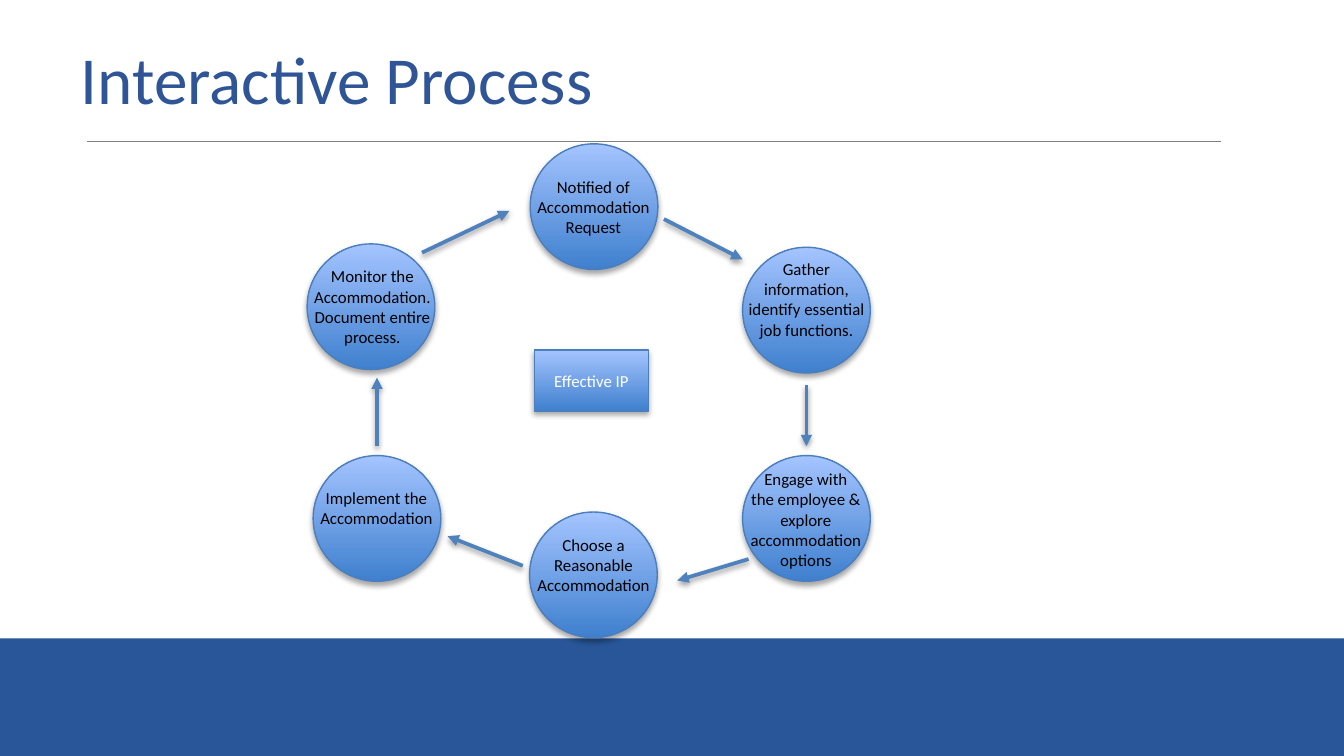
from dataclasses import dataclass

from lxml.etree import SubElement
from pptx import Presentation
from pptx.dml.color import RGBColor
from pptx.enum.shapes import MSO_CONNECTOR, MSO_SHAPE
from pptx.enum.text import MSO_ANCHOR, MSO_AUTO_SIZE, PP_ALIGN
from pptx.oxml.ns import qn
from pptx.util import Emu, Pt

EMU_PER_PX = 4572  # 200 px to the inch
SLIDE_WIDTH, SLIDE_HEIGHT = 2000, 1125
BAND_TOP = 950
CIRCLE_WIDTH, CIRCLE_HEIGHT = 190, 187


@dataclass(frozen=True)
class Theme:
    font: str = "Calibri"
    title_size: float = 36
    label_size: float = 9
    title: str = "2F5596"
    label: str = "000000"
    hub_label: str = "FFFFFF"
    band: str = "285699"
    rule: str = "7F7F7F"
    gradient_bottom: str = "3F80CE"
    gradient_top: str = "A4C4FF"
    outline: str = "4B7EBC"
    arrow: str = "4F81BD"
    thin_line: float = 0.75
    arrow_line: float = 2


@dataclass(frozen=True)
class Box:
    left: int
    top: int
    width: int
    height: int

    def emu(self) -> tuple:
        return tuple(px(n) for n in (self.left, self.top, self.width, self.height))


@dataclass(frozen=True)
class Step:
    text: str
    left: int
    top: int
    label: Box


@dataclass(frozen=True)
class Arrow:
    start: tuple[int, int]
    end: tuple[int, int]


THEME = Theme()

STEPS = (
    Step("Notified of Accommodation Request", 789, 214, Box(777, 253, 212, 112)),
    Step("Gather information, identify essential job functions.",
         1105, 368, Box(1094, 375, 212, 172)),
    Step("Engage with\vthe employee & explore accommodation options",
         1105, 678, Box(1088, 688, 222, 172)),
    Step("Choose a Reasonable Accommodation", 788, 762, Box(778, 786, 210, 112)),
    Step("Implement the Accommodation", 466, 678, Box(455, 716, 210, 80)),
    Step("Monitor the Accommodation. Document entire process.",
         457, 363, Box(446, 386, 216, 142)),
)

ARROWS = (
    Arrow((988, 326), (1105, 386)),
    Arrow((1200, 573), (1200, 664)),
    Arrow((1114, 832), (1008, 864)),
    Arrow((778, 842), (666, 798)),
    Arrow((561, 664), (561, 562)),
    Arrow((628, 376), (758, 314)),
)


def px(length: int) -> Emu:
    return Emu(length * EMU_PER_PX)


def rgb(value: str) -> RGBColor:
    return RGBColor.from_string(value)


def write(frame, text: str, *, size: float, color: str, align=PP_ALIGN.CENTER,
          anchor=MSO_ANCHOR.TOP, side_inset: int = 16) -> None:
    frame.word_wrap = True
    frame.vertical_anchor = anchor
    frame.margin_left = frame.margin_right = px(side_inset)
    frame.margin_top = frame.margin_bottom = px(10)
    frame.text = text
    for paragraph in frame.paragraphs:
        paragraph.alignment = align
        paragraph.font.name = THEME.font
        paragraph.font.size = Pt(size)
        paragraph.font.color.rgb = rgb(color)


def add_shadow(shape, blur: float, distance: float, opacity: int) -> None:
    """Replace the theme effects by a soft black shadow straight below."""
    effects = SubElement(shape.element.spPr, qn("a:effectLst"))
    shadow = SubElement(effects, qn("a:outerShdw"), blurRad=str(Pt(blur)),
                        dist=str(Pt(distance)), dir="5400000", rotWithShape="0")
    black = SubElement(shadow, qn("a:srgbClr"), val="000000")
    SubElement(black, qn("a:alpha"), val=str(opacity * 1000))


def add_glossy_shape(slide, kind: MSO_SHAPE, box: Box):
    shape = slide.shapes.add_shape(kind, *box.emu())
    shape.fill.gradient()
    shape.fill.gradient_angle = 90
    bottom, top = shape.fill.gradient_stops
    bottom.color.rgb, bottom.position = rgb(THEME.gradient_bottom), 0
    top.color.rgb, top.position = rgb(THEME.gradient_top), 1
    shape.line.color.rgb = rgb(THEME.outline)
    shape.line.width = Pt(THEME.thin_line)
    add_shadow(shape, blur=3.1, distance=1.8, opacity=35)
    return shape


def add_line(slide, start: tuple[int, int], end: tuple[int, int],
             color: str, width: float):
    line = slide.shapes.add_connector(
        MSO_CONNECTOR.STRAIGHT, *(px(n) for n in (*start, *end)))
    line.line.color.rgb = rgb(color)
    line.line.width = Pt(width)
    return line


def add_arrow(slide, arrow: Arrow) -> None:
    line = add_line(slide, arrow.start, arrow.end, THEME.arrow, THEME.arrow_line)
    SubElement(line.element.spPr.find(qn("a:ln")), qn("a:tailEnd"), type="triangle")
    add_shadow(line, blur=3.1, distance=1.6, opacity=38)


def add_label(slide, step: Step) -> None:
    label = slide.shapes.add_textbox(*step.label.emu())
    write(label.text_frame, step.text, size=THEME.label_size, color=THEME.label)
    label.text_frame.auto_size = MSO_AUTO_SIZE.SHAPE_TO_FIT_TEXT


def add_frame(slide) -> None:
    """Add the title, the rule below it and the band at the foot."""
    band = slide.shapes.add_shape(
        MSO_SHAPE.RECTANGLE,
        *Box(0, BAND_TOP, SLIDE_WIDTH, SLIDE_HEIGHT - BAND_TOP).emu())
    band.shadow.inherit = False
    band.fill.solid()
    band.fill.fore_color.rgb = rgb(THEME.band)
    band.line.fill.background()

    rule = add_line(slide, (130, 211), (1817, 211), THEME.rule, THEME.thin_line)
    SubElement(rule.element.spPr, qn("a:effectLst"))

    title = slide.shapes.title
    title.left, title.top, title.width, title.height = Box(100, 46, 1800, 188).emu()
    write(title.text_frame, "Interactive Process", size=THEME.title_size,
          color=THEME.title, align=PP_ALIGN.LEFT, side_inset=20)


def main() -> None:
    presentation = Presentation()
    presentation.slide_width = px(SLIDE_WIDTH)
    presentation.slide_height = px(SLIDE_HEIGHT)
    slide = presentation.slides.add_slide(presentation.slide_layouts[5])

    add_frame(slide)
    for step in STEPS:
        add_glossy_shape(slide, MSO_SHAPE.OVAL,
                         Box(step.left, step.top, CIRCLE_WIDTH, CIRCLE_HEIGHT))
    for step in STEPS:
        add_label(slide, step)
    for arrow in ARROWS:
        add_arrow(slide, arrow)
    hub = add_glossy_shape(slide, MSO_SHAPE.RECTANGLE, Box(795, 521, 170, 91))
    write(hub.text_frame, "Effective IP", size=THEME.label_size,
          color=THEME.hub_label, anchor=MSO_ANCHOR.MIDDLE)

    presentation.save("out.pptx")


if __name__ == "__main__":
    main()
